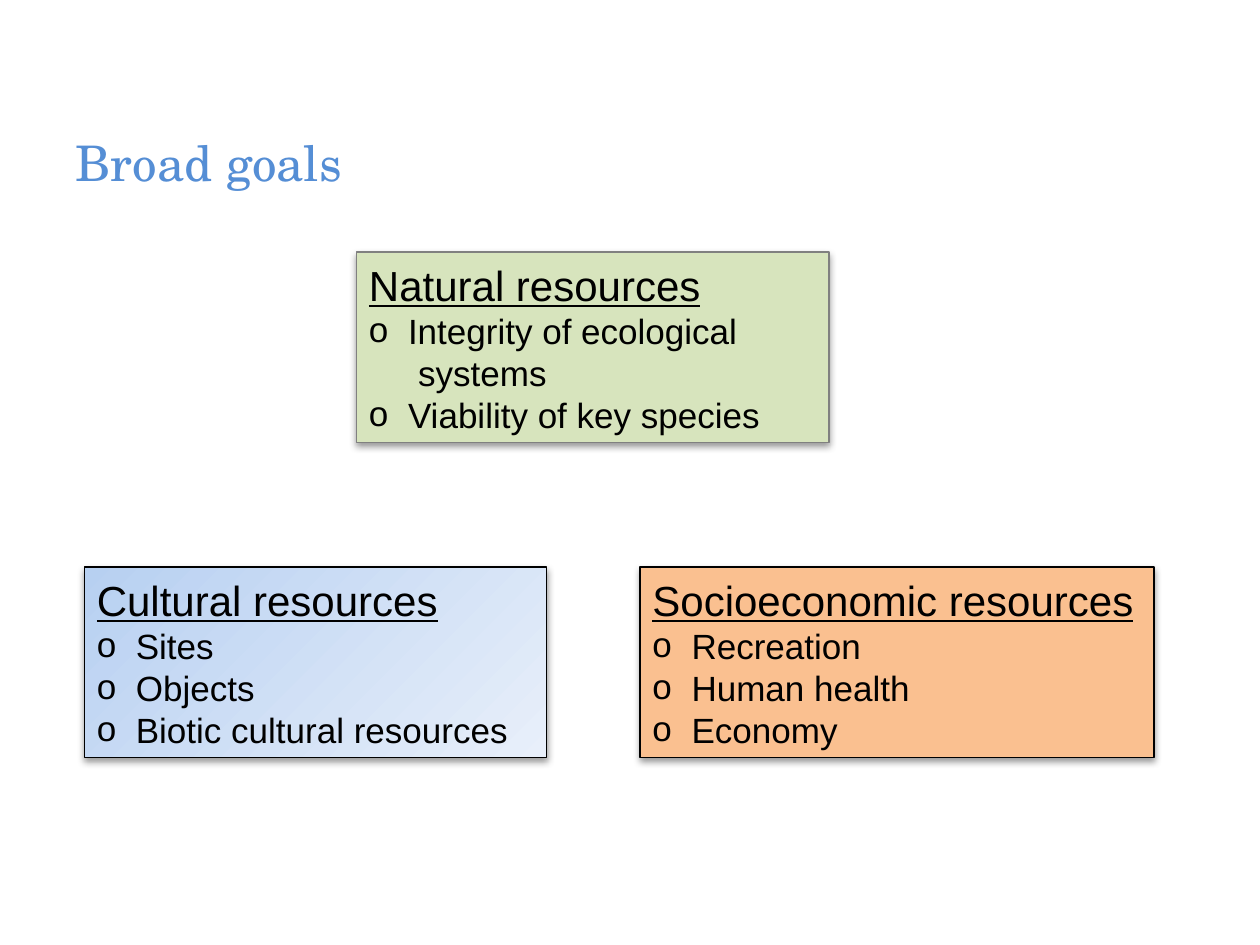
import pptx
import pptx.dml.color
import pptx.enum.shapes
import pptx.enum.text
import pptx.oxml
import pptx.oxml.ns
import pptx.util

Inches = pptx.util.Inches
Pt = pptx.util.Pt
TOP = pptx.enum.text.MSO_ANCHOR.TOP
LEFT = pptx.enum.text.PP_ALIGN.LEFT


def color(code):
    return pptx.dml.color.RGBColor.from_string(code)


def add_xml(parent, text):
    head, tail = text.split(">", 1) if not text.endswith("/>") else (text[:-2], None)
    end = "/>" if tail is None else ">" + tail
    xml = f"{head} {pptx.oxml.ns.nsdecls('a')}{end}"
    parent.append(pptx.oxml.parse_xml(xml))


class Deck:
    title_font = "TeX Gyre Schola"
    body_font = "Arial"
    ink = "000000"
    accent = "558ED5"

    def __init__(self):
        self.file = pptx.Presentation()
        self.file.slide_width = Inches(10)
        self.file.slide_height = Inches(7.5)
        self.slide = self.file.slides.add_slide(self.file.slide_layouts[5])

    def style(self, para, name, size, code):
        para.alignment = LEFT
        font = para.font
        font.name, font.size = name, Pt(size)
        font.color.rgb = color(code)

    def title(self, text, x, y, w, h):
        shape = self.slide.shapes.title
        shape.left, shape.top = Inches(x), Inches(y)
        shape.width, shape.height = Inches(w), Inches(h)
        frame = shape.text_frame
        frame.text = text
        frame.vertical_anchor = TOP
        self.style(frame.paragraphs[0], self.title_font, 28, self.accent)

    def shadow(self, shape):
        shape.shadow.inherit = False
        effects = shape._element.spPr.find(pptx.oxml.ns.qn("a:effectLst"))
        add_xml(effects, '<a:outerShdw blurRad="52000" dist="25400" dir="5400000" '
                'rotWithShape="0"><a:srgbClr val="000000"><a:alpha val="40000"/>'
                '</a:srgbClr></a:outerShdw>')

    def fill(self, shape, codes):
        """Fill with one colour, or blend two from top left to bottom right."""
        if len(codes) == 1:
            shape.fill.solid()
            shape.fill.fore_color.rgb = color(codes[0])
            return
        shape.fill.gradient()
        shape.fill.gradient_angle = 315
        for stop, code in zip(shape.fill.gradient_stops, codes):
            stop.color.rgb = color(code)

    def item(self, para, text, bullet):
        props = para._p.get_or_add_pPr()
        indent = Inches(0.31 if bullet else 0.39)
        props.set("marL", str(indent))
        props.set("indent", str(-indent if bullet else 0))
        if bullet:
            add_xml(props, f'<a:buFont typeface="{self.body_font}"/>')
            add_xml(props, '<a:buChar char="o"/>')
        para.text = text
        para.line_spacing = Pt(24)
        self.style(para, self.body_font, 20, self.ink)

    def card(self, head, items, x, y, w, codes, edge):
        """Items are (text, has bullet) pairs."""
        shape = self.slide.shapes.add_shape(
            pptx.enum.shapes.MSO_SHAPE.RECTANGLE,
            Inches(x), Inches(y), Inches(w), Inches(1.51))
        self.fill(shape, codes)
        shape.line.color.rgb = color(edge)
        shape.line.width = Pt(0.75)
        self.shadow(shape)
        frame = shape.text_frame
        frame.word_wrap = True
        frame.vertical_anchor = TOP
        frame.text = head
        first = frame.paragraphs[0]
        first.line_spacing = Pt(29.5)
        self.style(first, self.body_font, 24, self.ink)
        first.font.underline = True
        first.runs[0].font.underline = True
        for text, bullet in items:
            self.item(frame.add_paragraph(), text, bullet)


def main():
    deck = Deck()
    deck.title("Broad goals", 0.5, 1, 9, 1)
    deck.card("Natural resources",
              [("Integrity of ecological", True), ("systems", False),
               ("Viability of key species", True)],
              2.83, 2, 3.75, ["D7E4BD"], "808080")
    deck.card("Cultural resources",
              [("Sites", True), ("Objects", True),
               ("Biotic cultural resources", True)],
              0.67, 4.5, 3.67, ["B7D0F1", "E8EFFA"], "000000")
    deck.card("Socioeconomic resources",
              [("Recreation", True), ("Human health", True), ("Economy", True)],
              5.08, 4.5, 4.08, ["FAC090"], "000000")
    deck.file.save("out.pptx")


if __name__ == "__main__":
    main()
